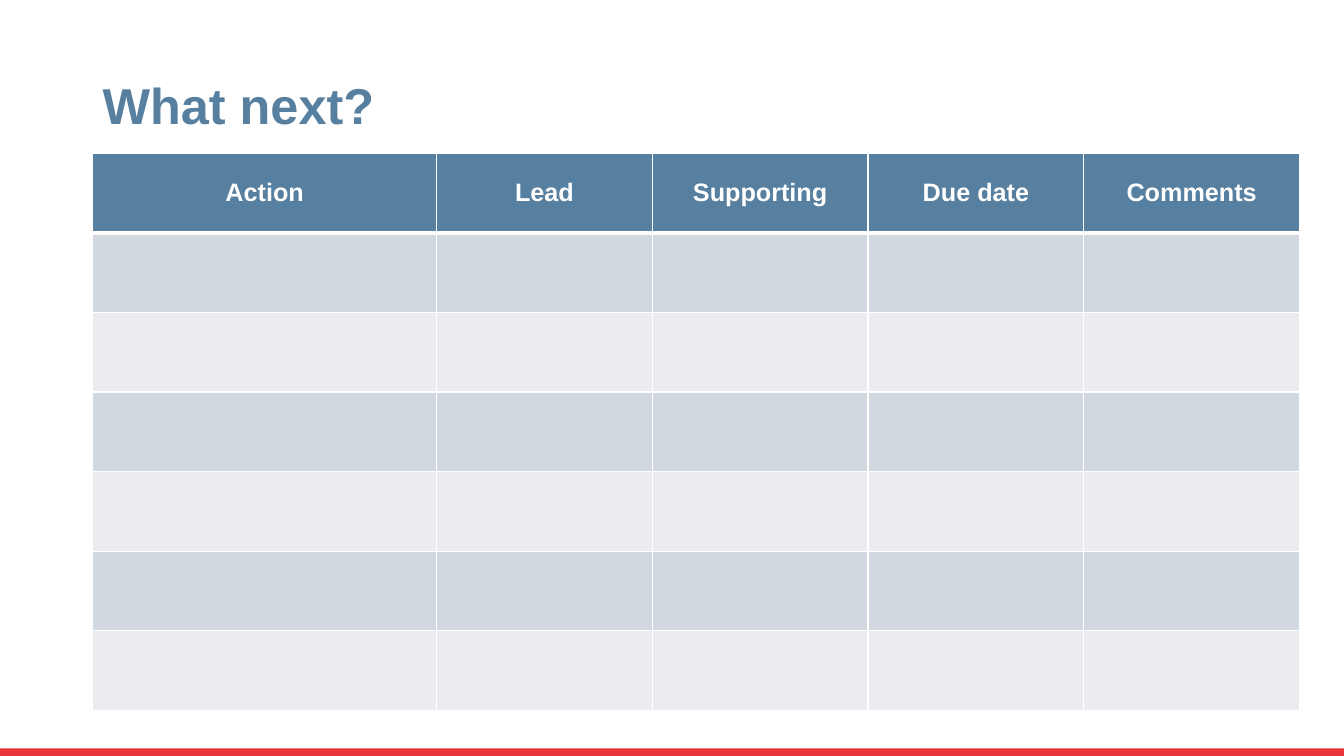
"""Build an action-plan slide with a title, an empty tracking table and a footer band."""
from dataclasses import dataclass

from lxml import etree
from pptx import Presentation
from pptx.dml.color import RGBColor
from pptx.enum.shapes import MSO_SHAPE
from pptx.enum.text import MSO_ANCHOR, PP_ALIGN
from pptx.oxml.ns import qn
from pptx.util import Inches, Pt

RECT = MSO_SHAPE.RECTANGLE
MIDDLE = MSO_ANCHOR.MIDDLE
LEFT, CENTER = PP_ALIGN.LEFT, PP_ALIGN.CENTER

WIDTH, HEIGHT = Inches(13.33), Inches(7.5)
BLUE, RED, WHITE = "577F9F", "E73439", "FFFFFF"
BANDS = ("D1D8DF", "EAECF0")
ROWS = 7
ROW_HEIGHT = Inches(0.79)
TABLE_LEFT, TABLE_TOP = Inches(0.92), Inches(1.52)
THIN, THICK = 1, 3


@dataclass(frozen=True)
class Column:
    heading: str
    width: float = 2.14


COLUMNS = (
    Column("Action", 3.41),
    Column("Lead"),
    Column("Supporting"),
    Column("Due date"),
    Column("Comments"),
)


def rgb(value: str) -> RGBColor:
    return RGBColor.from_string(value)


def write(tf, text: str, size: int, color: str, align) -> None:
    p = tf.paragraphs[0]
    p.alignment = align
    r = p.add_run()
    r.text = text
    for name, value in {"name": "Arial", "size": Pt(size), "bold": True}.items():
        setattr(r.font, name, value)
    r.font.color.rgb = rgb(color)


def set_borders(cell, top: int, bottom: int) -> None:
    props = cell._tc.get_or_add_tcPr()
    for side, points in {"L": THIN, "R": THIN, "T": top, "B": bottom}.items():
        line = etree.SubElement(props, qn(f"a:ln{side}"), w=str(Pt(points)))
        fill = etree.SubElement(line, qn("a:solidFill"))
        etree.SubElement(fill, qn("a:srgbClr"), val=WHITE)


def add_band(s) -> None:
    band = s.shapes.add_shape(RECT, 0, int(HEIGHT * 0.99), WIDTH, int(HEIGHT * 0.01))
    band.shadow.inherit = False
    band.fill.solid()
    band.fill.fore_color.rgb = rgb(RED)
    band.line.fill.background()


def add_title(s, text: str) -> None:
    box = s.shapes.add_textbox(TABLE_LEFT, Inches(0.64), Inches(11.5), Inches(0.87))
    tf = box.text_frame
    for name, value in {"word_wrap": True, "vertical_anchor": MIDDLE}.items():
        setattr(tf, name, value)
    write(tf, text, 36, BLUE, LEFT)
    tf.paragraphs[0].line_spacing = 0.9


def add_plan(s) -> None:
    width = Inches(sum(column.width for column in COLUMNS))
    frame = s.shapes.add_table(
        ROWS, len(COLUMNS), TABLE_LEFT, TABLE_TOP, width, ROW_HEIGHT * ROWS
    )
    table = frame.table
    for row in range(ROWS):
        table.rows[row].height = ROW_HEIGHT
        color = BANDS[(row - 1) % 2] if row else BLUE
        for col in range(len(COLUMNS)):
            cell = table.cell(row, col)
            set_borders(cell, THICK if row == 1 else THIN, THIN if row else THICK)
            cell.fill.solid()
            cell.fill.fore_color.rgb = rgb(color)
    for col, column in enumerate(COLUMNS):
        table.columns[col].width = Inches(column.width)
        heading = table.cell(0, col)
        heading.vertical_anchor = MIDDLE
        write(heading.text_frame, column.heading, 18, WHITE, CENTER)


def main() -> None:
    prs = Presentation()
    prs.slide_width, prs.slide_height = WIDTH, HEIGHT
    s = prs.slides.add_slide(prs.slide_layouts[6])
    add_band(s)
    add_title(s, "What next?")
    add_plan(s)
    prs.save("out.pptx")


if __name__ == "__main__":
    main()
